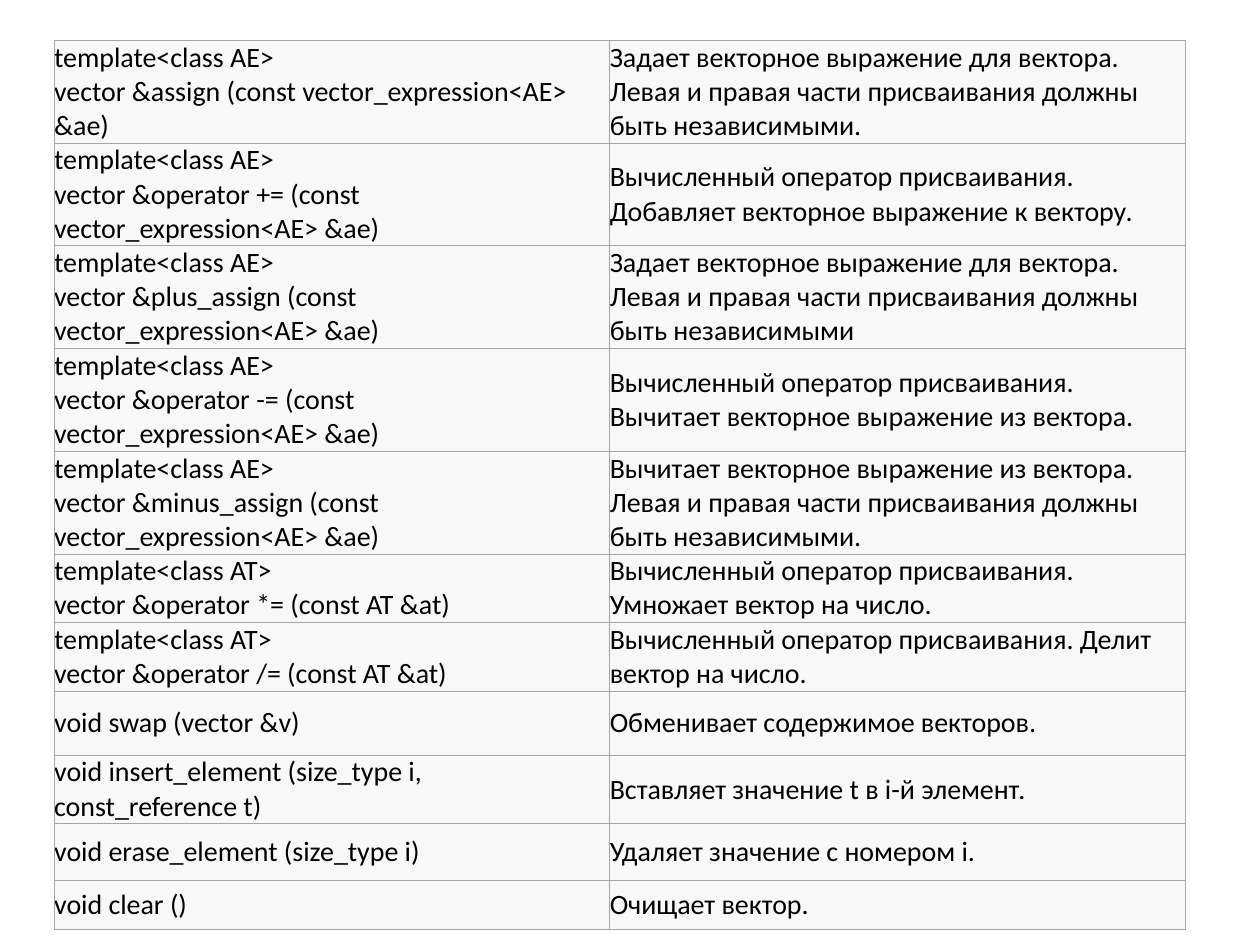
from lxml import etree
from pptx import Presentation
from pptx.dml.color import RGBColor
from pptx.enum.text import MSO_ANCHOR
from pptx.oxml.ns import qn
from pptx.util import Inches, Pt

MIDDLE = MSO_ANCHOR.MIDDLE
BLACK = RGBColor(0x00, 0x00, 0x00)
CELL_GRAY = RGBColor(0xF8, 0xF8, 0xF8)
BORDER_GRAY = RGBColor(0xA5, 0xA5, 0xA5)

COLUMN_WIDTHS = (4.41, 4.57)
TABLE_HEIGHT = 7

# Row height, declaration, description
VECTOR_METHODS = [
    (0.66, "template<class AE>\nvector &assign (const vector_expression<AE> &ae)",
     "Задает векторное выражение для вектора. Левая и правая части "
     "присваивания должны быть независимыми."),
    (0.66, "template<class AE>\nvector &operator += (const vector_expression<AE> &ae)",
     "Вычисленный оператор присваивания. Добавляет векторное выражение к вектору."),
    (0.66, "template<class AE>\nvector &plus_assign (const vector_expression<AE> &ae)",
     "Задает векторное выражение для вектора. Левая и правая части "
     "присваивания должны быть независимыми"),
    (0.51, "template<class AE>\nvector &operator -= (const vector_expression<AE> &ae)",
     "Вычисленный оператор присваивания. Вычитает векторное выражение из вектора."),
    (0.66, "template<class AE>\nvector &minus_assign (const vector_expression<AE> &ae)",
     "Вычитает векторное выражение из вектора. Левая и правая части "
     "присваивания должны быть независимыми."),
    (0.51, "template<class AT>\nvector &operator *= (const AT &at)",
     "Вычисленный оператор присваивания. Умножает вектор на число."),
    (0.51, "template<class AT>\nvector &operator /= (const AT &at)",
     "Вычисленный оператор присваивания. Делит вектор на число."),
    (0.51, "void swap (vector &v)", "Обменивает содержимое векторов."),
    (0.27, "void insert_element (size_type i, const_reference t)",
     "Вставляет значение t в i-й элемент."),
    (0.45, "void erase_element (size_type i)", "Удаляет значение с номером i."),
    (0.39, "void clear ()", "Очищает вектор."),
]


class SlideBuilder:
    def __init__(self, slide, font_name="Calibri", font_size=16, border_width=0.6):
        self.slide = slide
        self.font_name = font_name
        self.font_size = Pt(font_size)
        self.border_width = Pt(border_width)

    def add_table(self, left, top, height, column_widths, rows):
        """Add a table; each row is its height followed by the cell texts."""
        frame = self.slide.shapes.add_table(
            len(rows), len(column_widths), Inches(left), Inches(top),
            Inches(sum(column_widths)), Inches(height))
        table = frame.table
        table.first_row = False
        table.horz_banding = False
        for column, width in zip(table.columns, column_widths):
            column.width = Inches(width)
        for row, (row_height, *texts) in zip(table.rows, rows):
            row.height = Inches(row_height)
            for cell, text in zip(row.cells, texts):
                self.fill_cell(cell, text)
        frame.height = Inches(height)

    def fill_cell(self, cell, text):
        cell.margin_left = cell.margin_right = 0
        cell.margin_top = cell.margin_bottom = 0
        cell.vertical_anchor = MIDDLE
        paragraph = cell.text_frame.paragraphs[0]
        paragraph.text = text
        for run in paragraph.runs:
            run.font.name = self.font_name
            run.font.size = self.font_size
            run.font.color.rgb = BLACK
        self.add_borders(cell)
        cell.fill.solid()
        cell.fill.fore_color.rgb = CELL_GRAY

    def add_borders(self, cell):
        properties = cell._tc.get_or_add_tcPr()
        for side in ("a:lnL", "a:lnR", "a:lnT", "a:lnB"):
            line = etree.SubElement(properties, qn(side), w=str(self.border_width))
            fill = etree.SubElement(line, qn("a:solidFill"))
            etree.SubElement(fill, qn("a:srgbClr"), val=str(BORDER_GRAY))


def main():
    presentation = Presentation()
    presentation.slide_width = Inches(10)
    presentation.slide_height = Inches(7.5)
    slide = presentation.slides.add_slide(presentation.slide_layouts[6])
    builder = SlideBuilder(slide)
    builder.add_table(0.43, 0.32, TABLE_HEIGHT, COLUMN_WIDTHS, VECTOR_METHODS)
    presentation.save("out.pptx")


if __name__ == "__main__":
    main()
